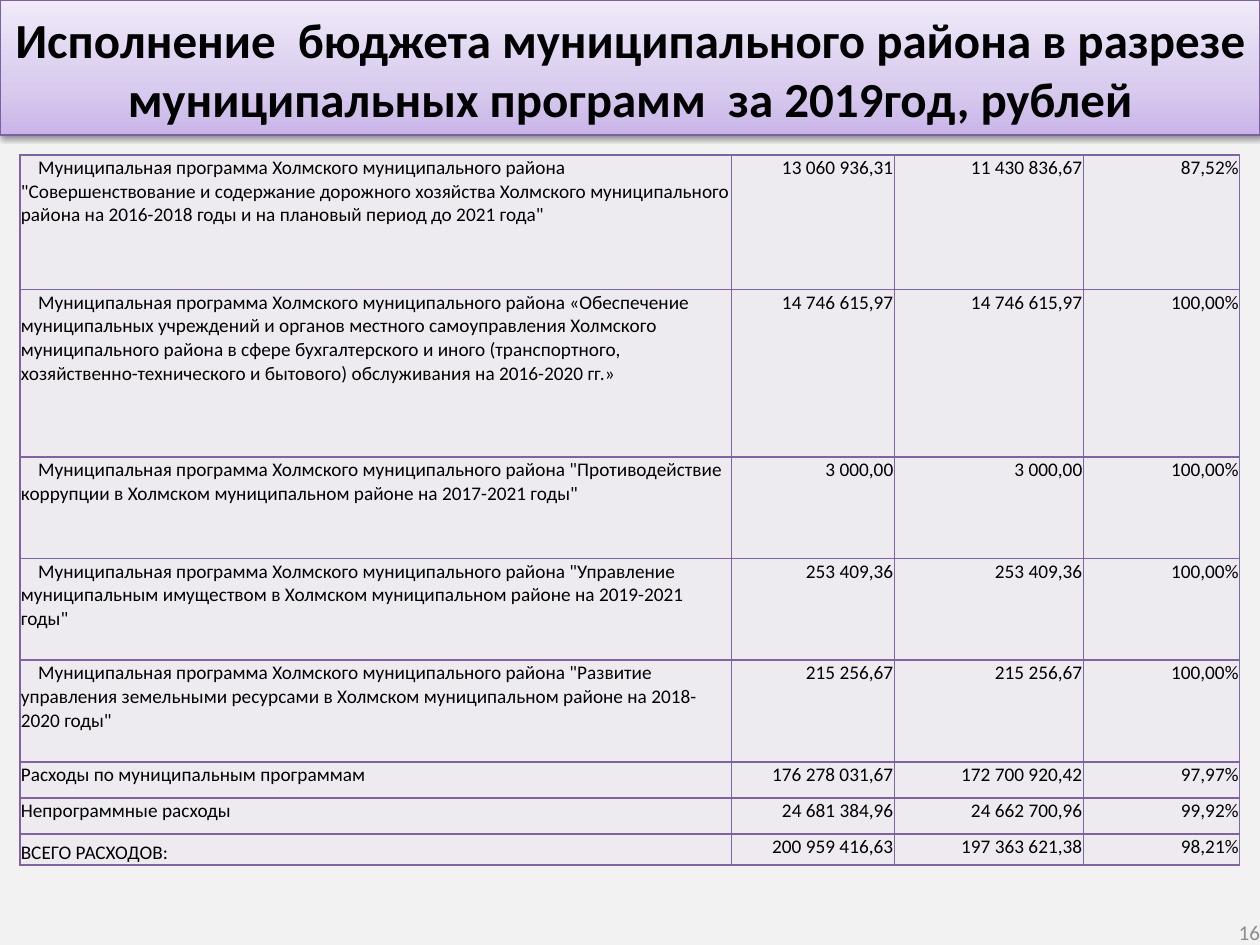
from copy import deepcopy

from lxml.etree import SubElement
from pptx import Presentation
from pptx.dml.color import RGBColor
from pptx.enum.text import MSO_ANCHOR, MSO_AUTO_SIZE, PP_ALIGN
from pptx.oxml.ns import qn
from pptx.util import Cm, Pt

theme = {
    "font": "Calibri",
    "ink": "000000", "grey": "8C8C8C", "back": "F2F2F2",
    "cell": "EDEAF0", "grid": "8064A2", "edge": "7D60A0",
    "grad": [(0, "C9B5E8"), (0.35, "D8CBEE"), (1, "F0EAF9")],
    "head": 28, "body": 11, "page": 12,
}

prog = "Муниципальная программа Холмского муниципального района "
rows = [
    (2.72, prog + '"Совершенствование и содержание дорожного хозяйства Холмского '
     'муниципального района на 2016-2018 годы и на плановый период до 2021 года"',
     "13 060 936,31", "11 430 836,67", "87,52%"),
    (3.37, prog + "«Обеспечение муниципальных учреждений и органов местного "
     "самоуправления Холмского муниципального района в сфере бухгалтерского и иного "
     "(транспортного, хозяйственно-технического и бытового) обслуживания на 2016-2020 гг.»",
     "14 746 615,97", "14 746 615,97", "100,00%"),
    (2.05, prog + '"Противодействие коррупции в Холмском муниципальном районе '
     'на 2017-2021 годы"', "3 000,00", "3 000,00", "100,00%"),
    (2.05, prog + '"Управление муниципальным имуществом в Холмском муниципальном '
     'районе на 2019-2021 годы"', "253 409,36", "253 409,36", "100,00%"),
    (2.05, prog + '"Развитие управления земельными ресурсами в Холмском муниципальном '
     'районе на 2018-2020 годы"', "215 256,67", "215 256,67", "100,00%"),
    (0.73, "Расходы по муниципальным программам",
     "176 278 031,67", "172 700 920,42", "97,97%"),
    (0.73, "Непрограммные расходы", "24 681 384,96", "24 662 700,96", "99,92%"),
    (0.62, "ВСЕГО РАСХОДОВ:", "200 959 416,63", "197 363 621,38", "98,21%"),
]
cols = [14.35, 3.28, 3.81, 3.15]


def assign(item, vals):
    for name, val in vals.items():
        setattr(item, name, val)


def write(frame, text, size, align, ink="ink", bold=False):
    frame.text = text
    par = frame.paragraphs[0]
    par.alignment = align
    font = par.runs[0].font
    assign(font, {"name": theme["font"], "size": Pt(theme[size]), "bold": bold})
    font.color.rgb = RGBColor.from_string(theme[ink])
    return par


# Slide and background
deck = Presentation()
assign(deck, {"slide_width": Cm(25.4), "slide_height": Cm(19.05)})
slide = deck.slides.add_slide(deck.slide_layouts[5])
fill = slide.background.fill
fill.solid()
fill.fore_color.rgb = RGBColor.from_string(theme["back"])

# Title band
title = slide.shapes.title
assign(title, {"left": Cm(0), "top": Cm(0), "width": Cm(25.4), "height": Cm(2.72)})
assign(title.text_frame, {
    "margin_left": Cm(0.25), "margin_right": Cm(0.25),
    "margin_top": Cm(0.2), "margin_bottom": Cm(0.13),
    "vertical_anchor": MSO_ANCHOR.TOP, "word_wrap": True,
    "auto_size": MSO_AUTO_SIZE.SHAPE_TO_FIT_TEXT,
})
write(title.text_frame, "Исполнение  бюджета муниципального района в разрезе "
      "муниципальных программ  за 2019год, рублей", "head", PP_ALIGN.CENTER, bold=True)

# Band gradient with three stops, rising from the bottom
title.fill.gradient()
title.fill.gradient_angle = 90
props = title.element.spPr
stops = props.find(".//" + qn("a:gsLst"))
stops.append(deepcopy(stops[0]))
for stop, (place, tint) in zip(title.fill.gradient_stops, theme["grad"]):
    stop.position = place
    stop.color.rgb = RGBColor.from_string(tint)
title.line.width = Pt(0.75)
title.line.color.rgb = RGBColor.from_string(theme["edge"])

# Band shadow
title.shadow.inherit = False
shade = SubElement(props.find(qn("a:effectLst")), qn("a:outerShdw"),
                   blurRad=str(Pt(3.1)), dist=str(Pt(1.6)), dir="5400000", rotWithShape="0")
tint = SubElement(shade, qn("a:srgbClr"), val="000000")
SubElement(tint, qn("a:alpha"), val="38000")

# Budget table
table = slide.shapes.add_table(len(rows), len(cols), Cm(0.4), Cm(3.12),
                               Cm(sum(cols)), Cm(sum(row[0] for row in rows))).table
assign(table, {"first_row": False, "horz_banding": False})
for col, width in zip(table.columns, cols):
    col.width = Cm(width)
for r, (height, *texts) in enumerate(rows):
    table.rows[r].height = Cm(height)
    for c, text in enumerate(texts):
        cell = table.cell(r, c)
        last = c == 0 and r == len(rows) - 1
        assign(cell, {
            "margin_left": Cm(0.02), "margin_right": Cm(0.02),
            "margin_top": Cm(0.02), "margin_bottom": Cm(0),
            "vertical_anchor": MSO_ANCHOR.BOTTOM if last else MSO_ANCHOR.TOP,
        })
        par = write(cell.text_frame, text, "body", PP_ALIGN.RIGHT if c else PP_ALIGN.LEFT)
        if text.startswith(prog):
            par._p.get_or_add_pPr().set("indent", str(Cm(0.35)))
        # Borders come before the fill
        for side in ("a:lnL", "a:lnR", "a:lnT", "a:lnB"):
            line = SubElement(cell._tc.get_or_add_tcPr(), qn(side), w=str(Pt(1)))
            paint = SubElement(line, qn("a:solidFill"))
            SubElement(paint, qn("a:srgbClr"), val=theme["grid"])
        cell.fill.solid()
        cell.fill.fore_color.rgb = RGBColor.from_string(theme["cell"])

# Page number
page = slide.shapes.add_textbox(Cm(19.48), Cm(18.52), Cm(5.92), Cm(0.53)).text_frame
assign(page, {"margin_left": 0, "margin_right": 0, "margin_top": 0, "margin_bottom": 0,
              "vertical_anchor": MSO_ANCHOR.MIDDLE, "word_wrap": True})
write(page, "16", "page", PP_ALIGN.RIGHT, "grey")

deck.save("out.pptx")
